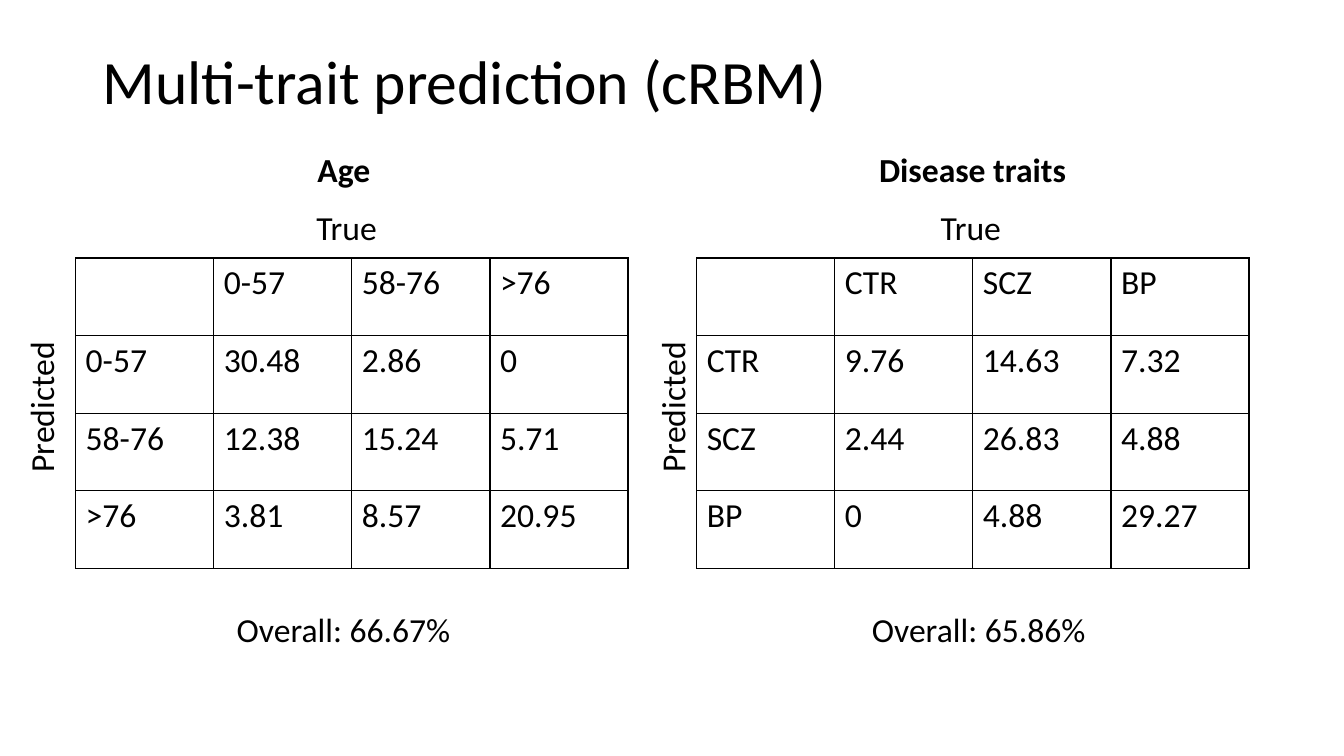
from dataclasses import dataclass

from lxml.etree import SubElement
from pptx import Presentation
from pptx.dml.color import RGBColor
from pptx.enum.text import MSO_ANCHOR
from pptx.oxml.ns import qn
from pptx.util import Inches, Pt


@dataclass(frozen=True)
class Theme:
    """Colours, font and sizes of the slide."""

    ink: str = "000000"
    paper: str = "FFFFFF"
    font: str = "Calibri"
    title: int = 44
    body: int = 24
    border: int = 1


THEME = Theme()
AGE = [
    ["", "0-57", "58-76", ">76"],
    ["0-57", "30.48", "2.86", "0"],
    ["58-76", "12.38", "15.24", "5.71"],
    [">76", "3.81", "8.57", "20.95"],
]
DISEASE = [
    ["", "CTR", "SCZ", "BP"],
    ["CTR", "9.76", "14.63", "7.32"],
    ["SCZ", "2.44", "26.83", "4.88"],
    ["BP", "0", "4.88", "29.27"],
]


def style_text(tf, size, bold=False):
    """Apply the theme font to every run of a text frame."""
    for p in tf.paragraphs:
        p.font.size = Pt(size)
        for r in p.runs:
            r.font.name = THEME.font
            r.font.size = Pt(size)
            r.font.bold = bold
            r.font.color.rgb = RGBColor.from_string(THEME.ink)


def add_label(s, text, left, top, width, height=0.5, size=THEME.body, bold=False, rotation=0):
    """Add a wrapped text box and return it."""
    sp = s.shapes.add_textbox(Inches(left), Inches(top), Inches(width), Inches(height))
    sp.rotation = rotation
    tf = sp.text_frame
    tf.word_wrap = True
    tf.text = text
    style_text(tf, size, bold)
    return sp


def add_title(s, text):
    """Add the slide title, centred vertically in its band."""
    tf = add_label(s, text, 0.92, 0.11, 11.5, 1.45, THEME.title).text_frame
    tf.vertical_anchor = MSO_ANCHOR.MIDDLE
    tf.paragraphs[0].line_spacing = 0.9


def style_cell(cell):
    """Give a cell a plain fill and thin borders on all sides."""
    tc_pr = cell._tc.get_or_add_tcPr()
    for side in ("lnL", "lnR", "lnT", "lnB"):
        ln = SubElement(tc_pr, qn(f"a:{side}"), w=str(Pt(THEME.border)))
        fill = SubElement(ln, qn("a:solidFill"))
        SubElement(fill, qn("a:srgbClr"), val=THEME.ink)
    cell.fill.solid()
    cell.fill.fore_color.rgb = RGBColor.from_string(THEME.paper)


def add_matrix(s, rows, left, top, col_width=1.37, row_height=0.77):
    """Add a confusion matrix as a bordered table."""
    n_rows, n_cols = len(rows), len(rows[0])
    frame = s.shapes.add_table(
        n_rows, n_cols, Inches(left), Inches(top),
        Inches(n_cols * col_width), Inches(n_rows * row_height),
    )
    table = frame.table
    table.first_row = False
    table.horz_banding = False
    for i, row in enumerate(rows):
        for j, value in enumerate(row):
            cell = table.cell(i, j)
            cell.text = value
            style_text(cell.text_frame, THEME.body)
            style_cell(cell)


def add_panel(s, heading, rows, overall, table_left, heading_box, true_left, overall_left, predicted_left):
    """Add one matrix with its heading, axis labels and overall score."""
    heading_left, heading_width = heading_box
    add_label(s, heading, heading_left, 1.43, heading_width, bold=True)
    add_label(s, "True", true_left, 2, 1.12)
    add_matrix(s, rows, table_left, 2.56)
    add_label(s, "Predicted", predicted_left, 3.63, 1.81, rotation=270)
    add_label(s, f"Overall: {overall}", overall_left, 5.99, 2.47)


def main():
    """Build the slide and save it."""
    prs = Presentation()
    prs.slide_width, prs.slide_height = Inches(13.33), Inches(7.5)
    s = prs.slides.add_slide(prs.slide_layouts[6])
    add_title(s, "Multi-trait prediction (cRBM)")
    add_panel(s, "Age", AGE, "66.67%", table_left=0.75, heading_box=(3.05, 1.12),
              true_left=3.04, overall_left=2.25, predicted_left=-0.5)
    add_panel(s, "Disease traits", DISEASE, "65.86%", table_left=6.91, heading_box=(8.62, 2.08),
              true_left=9.23, overall_left=8.55, predicted_left=5.76)
    prs.save("out.pptx")


if __name__ == "__main__":
    main()
